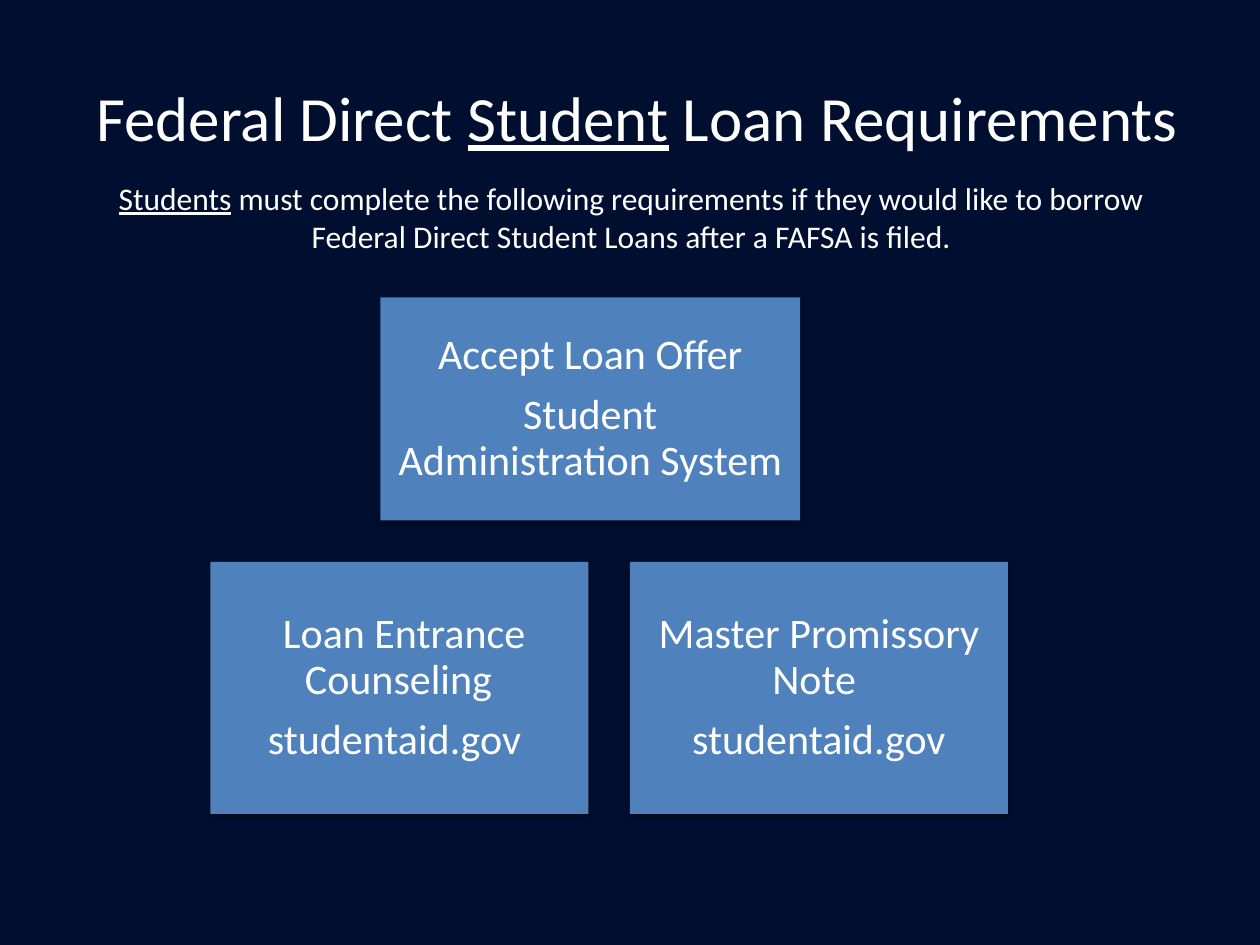
from dataclasses import dataclass

from lxml.etree import SubElement
from pptx import Presentation
from pptx.dml.color import RGBColor
from pptx.enum.shapes import MSO_SHAPE
from pptx.enum.text import MSO_ANCHOR, MSO_AUTO_SIZE, PP_ALIGN
from pptx.oxml.ns import qn
from pptx.util import Inches, Pt


@dataclass(frozen=True)
class Theme:
    """Colours, font and type sizes of the slide."""
    back: RGBColor = RGBColor.from_string("000E2F")
    card: RGBColor = RGBColor.from_string("4F81BD")
    text: RGBColor = RGBColor.from_string("FFFFFF")
    font: str = "Calibri"
    head: Pt = Pt(36)
    note: Pt = Pt(18)
    body: Pt = Pt(24)


THEME = Theme()
INSET = dict.fromkeys(
    ("margin_left", "margin_top", "margin_right", "margin_bottom"), Inches(0.1))
CARDS = [
    ((1.67, 4.46, 3, 2), [" Loan Entrance Counseling ", "studentaid.gov "], 0.06),
    ((3.02, 2.36, 3.33, 1.77),
     ["Accept Loan Offer", "Student Administration System"], 0),
    ((5, 4.46, 3, 2), ["Master Promissory Note ", "studentaid.gov"], 0),
]


def apply(item, values):
    """Set each named value on the item."""
    for name, value in values.items():
        setattr(item, name, value)


def place(shape, box):
    """Move a shape to a box given in inches."""
    names = ("left", "top", "width", "height")
    apply(shape, dict(zip(names, map(Inches, box))))


def write(para, runs, size):
    """Fill a centred paragraph with (text, underline) runs."""
    para.alignment = PP_ALIGN.CENTER
    for text, line in runs:
        run = para.add_run()
        run.text = text
        apply(run.font, {"name": THEME.font, "size": size, "underline": line})
        run.font.color.rgb = THEME.text


def shade(shape):
    """Give a shape a soft shadow straight below it."""
    shape.shadow.inherit = False
    effects = shape.element.spPr.find(qn("a:effectLst"))
    outer = SubElement(effects, qn("a:outerShdw"), blurRad=str(Pt(3.1)),
                       dist=str(Pt(1.8)), dir="5400000", rotWithShape="0")
    color = SubElement(outer, qn("a:srgbClr"), val="000000")
    SubElement(color, qn("a:alpha"), val="35000")


def add_head(slide, box):
    """Place the slide title."""
    title = slide.shapes.title
    place(title, box)
    title.text_frame.vertical_anchor = MSO_ANCHOR.MIDDLE
    runs = [(" Federal Direct ", False), ("Student", True),
            (" Loan Requirements", False)]
    write(title.text_frame.paragraphs[0], runs, THEME.head)


def add_note(slide, box):
    """Place the sentence under the title."""
    frame = slide.shapes.add_textbox(*map(Inches, box)).text_frame
    apply(frame, {"word_wrap": True, "auto_size": MSO_AUTO_SIZE.SHAPE_TO_FIT_TEXT})
    runs = [("Students", True),
            (" must complete the following requirements if they would like to "
             "borrow Federal Direct Student Loans after a FAFSA is filed.", False)]
    write(frame.paragraphs[0], runs, THEME.note)


def add_card(slide, box, lines, hang):
    """Place one requirement card with its lines of text."""
    card = slide.shapes.add_shape(MSO_SHAPE.RECTANGLE, *map(Inches, box))
    card.fill.solid()
    card.fill.fore_color.rgb = THEME.card
    card.line.fill.background()
    shade(card)
    frame = card.text_frame
    apply(frame, {"word_wrap": True, "vertical_anchor": MSO_ANCHOR.MIDDLE, **INSET})
    for num, line in enumerate(lines):
        para = frame.add_paragraph() if num else frame.paragraphs[0]
        apply(para, {"line_spacing": 0.9, "space_after": Pt(8.4)})
        write(para, [(line, False)], THEME.body)
        if hang:
            props = para._p.get_or_add_pPr()
            props.set("marL", str(Inches(hang)))
            props.set("indent", str(Inches(-hang)))


def main():
    """Build and save the slide."""
    deck = Presentation()
    apply(deck, {"slide_width": Inches(10), "slide_height": Inches(7.5)})
    slide = deck.slides.add_slide(deck.slide_layouts.get_by_name("Title Only"))
    slide.background.fill.solid()
    slide.background.fill.fore_color.rgb = THEME.back
    add_head(slide, (0.5, 0.3, 9, 1.25))
    add_note(slide, (0.8, 1.37, 8.42, 0.71))
    for box, lines, hang in CARDS:
        add_card(slide, box, lines, hang)
    deck.save("out.pptx")


if __name__ == "__main__":
    main()
